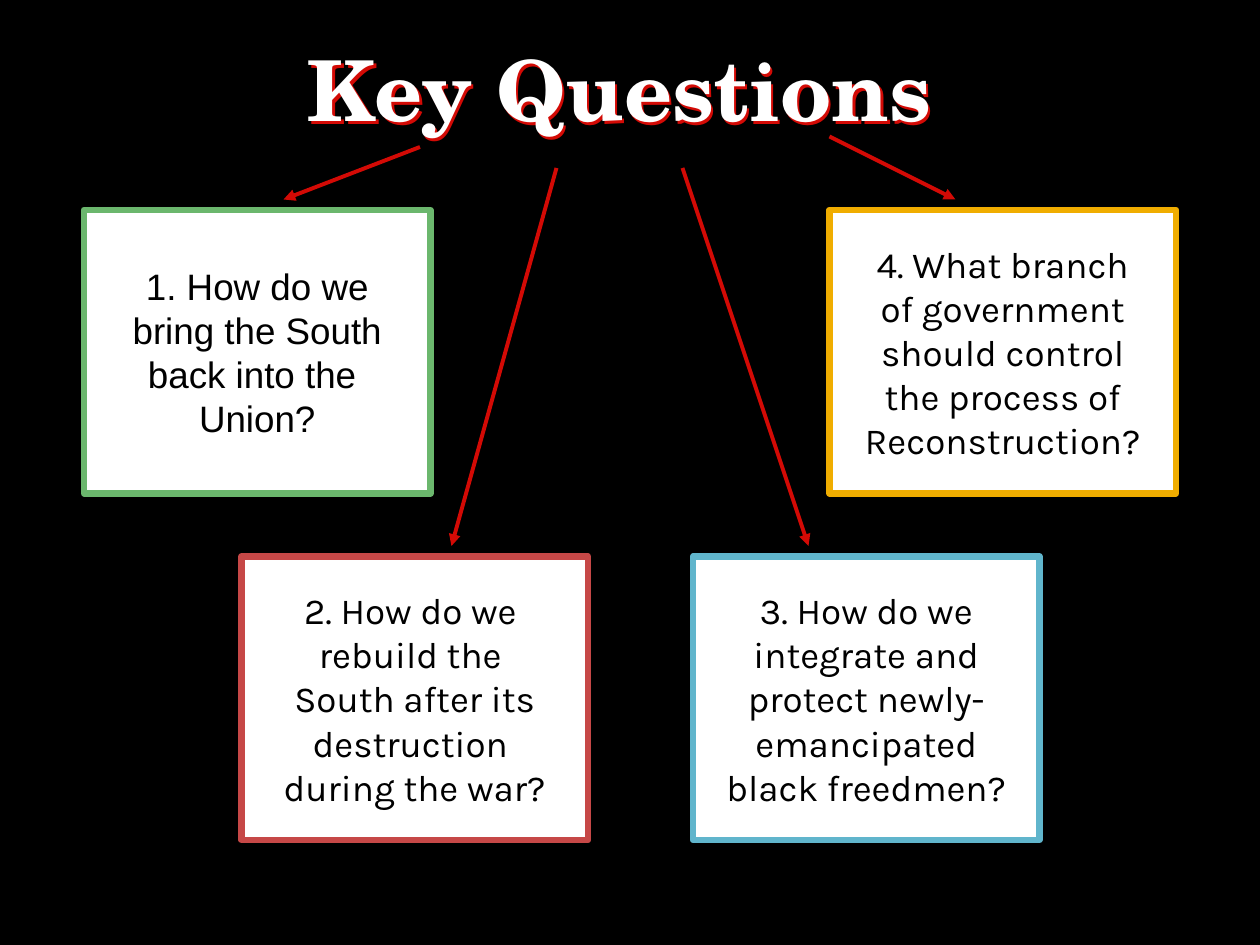
"""Build the Key Questions slide: a title with arrows to four framed questions."""
from lxml.etree import SubElement
from pptx import Presentation
from pptx.dml.color import RGBColor
from pptx.enum.shapes import MSO_CONNECTOR, MSO_SHAPE
from pptx.enum.text import MSO_ANCHOR, MSO_AUTO_SIZE, PP_ALIGN
from pptx.oxml.ns import qn
from pptx.util import Pt

COLORS = {
    "background": "000000",
    "paper": "FFFFFF",
    "ink": "000000",
    "red": "D30A05",
    "green frame": "6BB76D",
    "red frame": "C64847",
    "blue frame": "60B5CC",
    "yellow frame": "F0AD00",
}
BOX_WIDTH, BOX_HEIGHT = 198, 162
UPPER_ROW, LOWER_ROW = 120, 318
QUESTIONS = [
    (48, UPPER_ROW, "green frame", "Arial",
     ["1. How do we", "bring the South", "back into the ", "Union?"]),
    (138, LOWER_ROW, "red frame", "Karla",
     ["2. How do we ", "rebuild the ", "South after its", "destruction ", "during the war?"]),
    (396, LOWER_ROW, "blue frame", "Karla",
     ["3. How do we", "integrate and", "protect newly-", "emancipated", "black freedmen?"]),
    (474, UPPER_ROW, "yellow frame", "Karla",
     ["4. What branch", "of government", "should control", "the process of", "Reconstruction?"]),
]
ARROWS = [
    (240, 84, 162, 114),
    (318, 96, 258, 312),
    (390, 96, 462, 312),
    (474, 78, 546, 114),
]


def color(name):
    return RGBColor.from_string(COLORS[name])


def add_run(paragraph, text, font, size, color_name, bold=False):
    run = paragraph.add_run()
    run.text = text
    run.font.name = font
    run.font.size = Pt(size)
    run.font.bold = bold
    run.font.color.rgb = color(color_name)


presentation = Presentation()
presentation.slide_width, presentation.slide_height = Pt(720), Pt(540)
slide = presentation.slides.add_slide(presentation.slide_layouts[5])
slide.background.fill.solid()
slide.background.fill.fore_color.rgb = color("background")

title = slide.shapes.title
title.left, title.top, title.width, title.height = Pt(24), Pt(18), Pt(660), Pt(65)
title.fill.background()
title.text_frame.word_wrap = True
title.text_frame.auto_size = MSO_AUTO_SIZE.SHAPE_TO_FIT_TEXT
title.text_frame.vertical_anchor = MSO_ANCHOR.TOP
paragraph = title.text_frame.paragraphs[0]
paragraph.alignment = PP_ALIGN.CENTER
add_run(paragraph, "Key Questions", "TeX Gyre Schola", 48, "paper", bold=True)
effects = SubElement(title.element.spPr, qn("a:effectLst"))
shadow = SubElement(effects, qn("a:outerShdw"), dist=str(Pt(2)), dir="2700000", algn="ctr", rotWithShape="0")
SubElement(shadow, qn("a:srgbClr"), val=COLORS["red"])

for left, top, frame, font, lines in QUESTIONS:
    box = slide.shapes.add_shape(MSO_SHAPE.RECTANGLE, Pt(left), Pt(top), Pt(BOX_WIDTH), Pt(BOX_HEIGHT))
    box.shadow.inherit = False
    box.fill.solid()
    box.fill.fore_color.rgb = color("paper")
    box.line.color.rgb = color(frame)
    box.line.width = Pt(3.78)
    box.text_frame.word_wrap = False
    box.text_frame.vertical_anchor = MSO_ANCHOR.MIDDLE
    paragraph = box.text_frame.paragraphs[0]
    paragraph.alignment = PP_ALIGN.CENTER
    for index, line in enumerate(lines):
        if index:
            paragraph.add_line_break()
        add_run(paragraph, line, font, 21, "ink")

for start_x, start_y, end_x, end_y in ARROWS:
    arrow = slide.shapes.add_connector(
        MSO_CONNECTOR.STRAIGHT, Pt(start_x), Pt(start_y), Pt(end_x), Pt(end_y))
    arrow.line.color.rgb = color("red")
    arrow.line.width = Pt(2.25)
    SubElement(arrow.line._get_or_add_ln(), qn("a:tailEnd"), type="triangle")
    SubElement(arrow.element.spPr, qn("a:effectLst"))

presentation.save("out.pptx")
